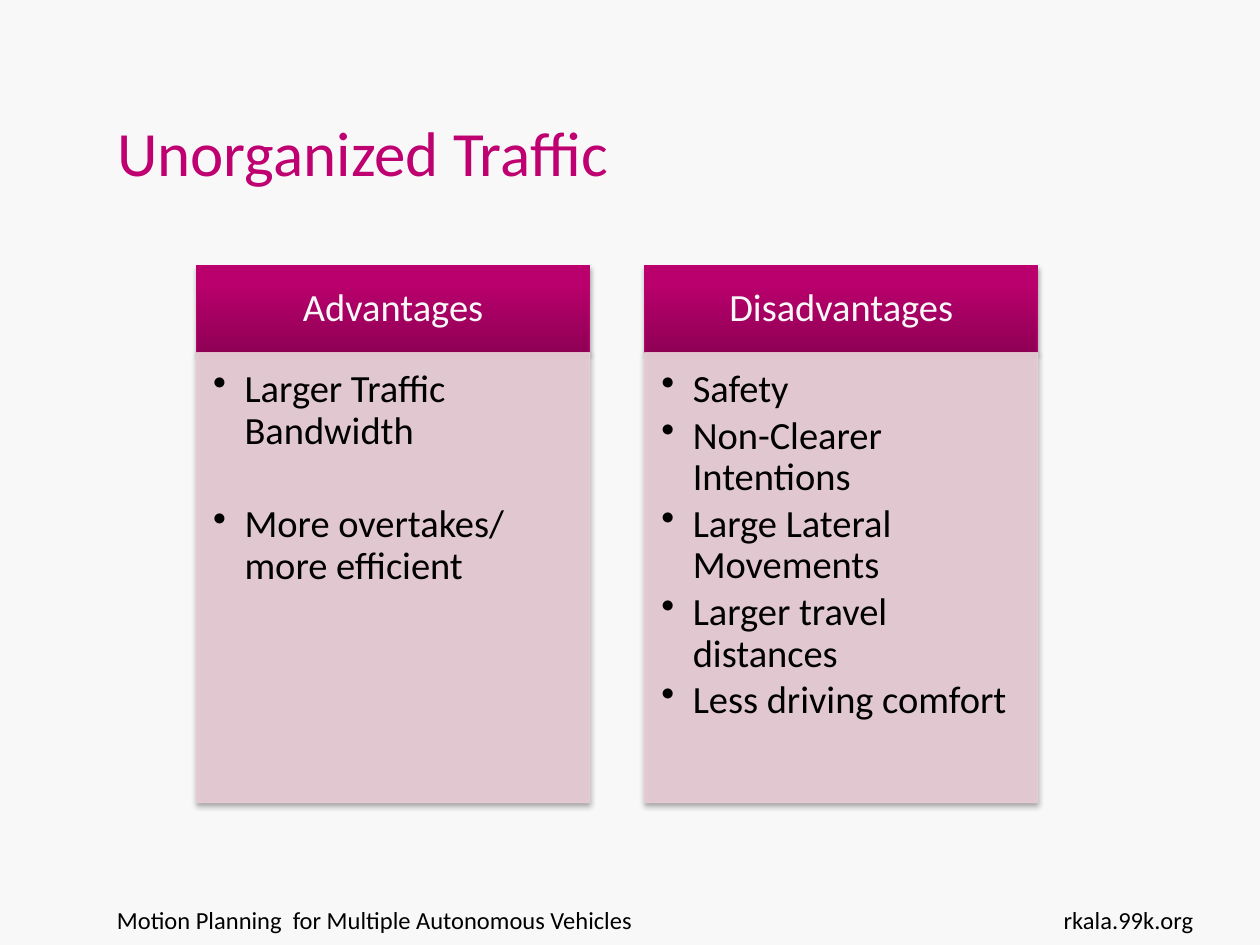
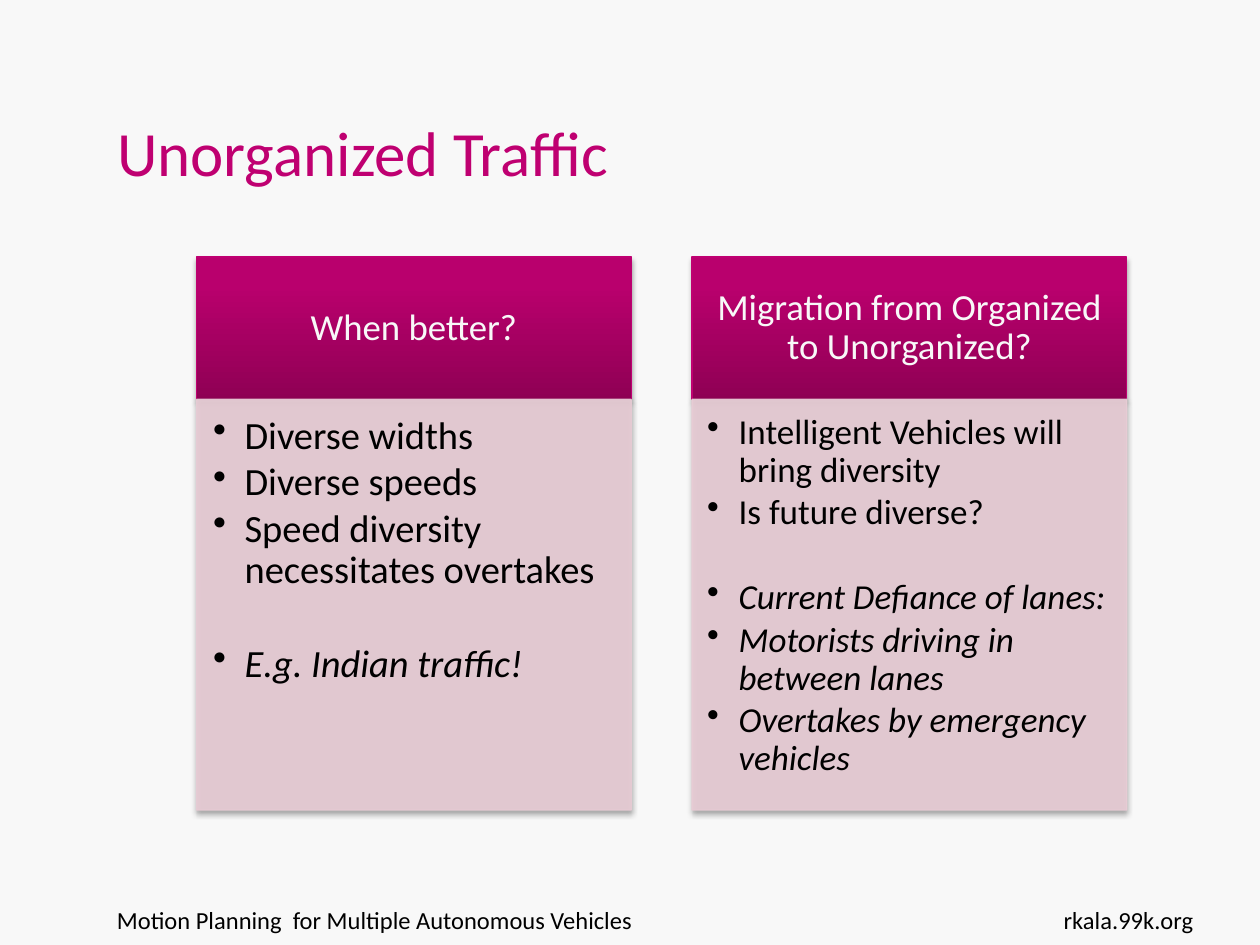
from dataclasses import dataclass

from pptx import Presentation
from pptx.dml.color import RGBColor
from pptx.enum.shapes import MSO_SHAPE
from pptx.enum.text import MSO_ANCHOR, PP_ALIGN
from pptx.oxml import parse_xml
from pptx.oxml.ns import nsdecls, qn
from pptx.util import Inches, Pt

# Content: a bullet is (text, italic, starts a new group)
TITLE = "Unorganized Traffic"
FOOTER_LEFT = "Motion Planning  for Multiple Autonomous Vehicles"
FOOTER_RIGHT = "rkala.99k.org"

PAGES = [
    {
        "top": 2.11, "column": 3.12, "header": 0.69, "body": 3.57, "header_size": 22,
        "cards": [
            ("Advantages", 22, [
                ("Larger Traffic Bandwidth", False, False),
                ("More overtakes/ more efficient", False, True),
            ]),
            ("Disadvantages", 22, [
                ("Safety", False, False),
                ("Non-Clearer Intentions", False, False),
                ("Large Lateral Movements", False, False),
                ("Larger travel distances", False, False),
                ("Less driving comfort", False, False),
            ]),
        ],
    },
    {
        "top": 2.04, "column": 3.45, "header": 1.13, "body": 3.26, "header_size": 21,
        "cards": [
            ("When better?", 22, [
                ("Diverse widths", False, False),
                ("Diverse speeds", False, False),
                ("Speed diversity necessitates overtakes", False, False),
                ("E.g. Indian traffic!", True, True),
            ]),
            ("Migration from Organized to Unorganized?", 20, [
                ("Intelligent Vehicles will bring diversity", False, False),
                ("Is future diverse?", False, False),
                ("Current Defiance of lanes:", True, True),
                ("Motorists driving in between lanes", True, False),
                ("Overtakes by emergency vehicles", True, False),
            ]),
        ],
    },
]


@dataclass(frozen=True)
class Theme:
    font: str = "Calibri"
    background: str = "F8F8F8"
    accent: str = "BF0071"
    panel: str = "E8CCD5"
    text: str = "000000"
    gradient: tuple = ((0, "8F0054"), (80, "B9006D"), (100, "BA006E"))
    title_size: int = 36
    footer_size: int = 14
    line_width: float = 0.75
    panel_alpha: int = 90


THEME = Theme()

# Layout rules
WIDTH, HEIGHT = 10, 7.5
MARGIN = 0.83
CARDS_LEFT = 1.56
COLUMN_PITCH = 1.14          # column step as a share of column width
FOOTER_TOP, FOOTER_HEIGHT = 7.13, 0.52
BULLET_INDENT = 0.25
LINE_SPACING = 0.9
SPACE_AFTER, GROUP_GAP = 0.13, 1.22     # shares of the type size
# Insets (left, top, right, bottom) in points per point of type
HEADER_INSETS = (0.55, 0.32, 0.55, 0.32)
BODY_INSETS = (0.43, 0.43, 0.55, 0.62)


def rgb(value):
    return RGBColor.from_string(value)


def add_span(para, text, size, color, italic=False):
    span = para.add_run()
    span.text = text
    span.font.name = THEME.font
    span.font.size = Pt(size)
    span.font.color.rgb = rgb(color)
    span.font.italic = italic


def set_insets(frame, shares, size):
    frame.word_wrap = True
    (frame.margin_left, frame.margin_top,
     frame.margin_right, frame.margin_bottom) = [Pt(share * size) for share in shares]


def add_alpha(fill_parent, percent):
    color = fill_parent.find(qn("a:solidFill")).find(qn("a:srgbClr"))
    color.append(parse_xml(f'<a:alpha {nsdecls("a")} val="{percent * 1000}"/>'))


def add_bullet(para):
    properties = para._p.get_or_add_pPr()
    indent = Inches(BULLET_INDENT)
    properties.set("marL", str(indent))
    properties.set("indent", str(-indent))
    properties.append(parse_xml(f'<a:buChar {nsdecls("a")} char="•"/>'))


def add_panel(page, left, top, width, height, line_color):
    """Rectangle with a thin outline and a soft shadow below it."""
    panel = page.shapes.add_shape(
        MSO_SHAPE.RECTANGLE, Inches(left), Inches(top), Inches(width), Inches(height))
    panel.line.color.rgb = rgb(line_color)
    panel.line.width = Pt(THEME.line_width)
    panel.shadow.inherit = False
    panel._element.spPr.find(qn("a:effectLst")).append(parse_xml(
        f'<a:outerShdw {nsdecls("a")} blurRad="{Pt(3.1)}" dist="{Pt(1.8)}" dir="5400000" '
        'rotWithShape="0"><a:srgbClr val="000000"><a:alpha val="35000"/></a:srgbClr>'
        '</a:outerShdw>'))
    return panel


def fill_gradient(panel):
    panel.fill.gradient()
    properties = panel._element.spPr
    stops = "".join(f'<a:gs pos="{share * 1000}"><a:srgbClr val="{color}"/></a:gs>'
                    for share, color in THEME.gradient)
    properties.replace(properties.find(qn("a:gradFill")), parse_xml(
        f'<a:gradFill {nsdecls("a")} rotWithShape="1"><a:gsLst>{stops}</a:gsLst>'
        f'<a:lin ang="{270 * 60000}" scaled="0"/></a:gradFill>'))


def add_header(page, text, size, *place):
    header = add_panel(page, *place, THEME.accent)
    fill_gradient(header)
    frame = header.text_frame
    set_insets(frame, HEADER_INSETS, size)
    frame.vertical_anchor = MSO_ANCHOR.MIDDLE
    para = frame.paragraphs[0]
    para.alignment = PP_ALIGN.CENTER
    para.line_spacing = LINE_SPACING
    add_span(para, text, size, THEME.background)


def add_body(page, bullets, size, *place):
    body = add_panel(page, *place, THEME.panel)
    body.fill.solid()
    body.fill.fore_color.rgb = rgb(THEME.panel)
    properties = body._element.spPr
    for parent in (properties, properties.find(qn("a:ln"))):
        add_alpha(parent, THEME.panel_alpha)
    frame = body.text_frame
    set_insets(frame, BODY_INSETS, size)
    frame.vertical_anchor = MSO_ANCHOR.TOP
    for index, (text, italic, new_group) in enumerate(bullets):
        para = frame.add_paragraph() if index else frame.paragraphs[0]
        add_bullet(para)
        para.alignment = PP_ALIGN.LEFT
        para.line_spacing = LINE_SPACING
        para.space_after = Pt(SPACE_AFTER * size)
        if new_group:
            para.space_before = Pt(GROUP_GAP * size)
        add_span(para, text, size, THEME.text, italic)


def add_footer(page, text, left, width, alignment):
    box = page.shapes.add_textbox(
        Inches(left), Inches(FOOTER_TOP), Inches(width), Inches(FOOTER_HEIGHT))
    box.text_frame.word_wrap = True
    para = box.text_frame.paragraphs[0]
    para.alignment = alignment
    add_span(para, text, THEME.footer_size, THEME.text)


def add_page(deck):
    """New page with the shared title and footers."""
    page = deck.slides.add_slide(deck.slide_layouts[5])
    title = page.shapes.title
    title.left, title.top = Inches(MARGIN), Inches(0.3)
    title.width, title.height = Inches(6.77), Inches(1.25)
    title.text_frame.word_wrap = True
    title.text_frame.vertical_anchor = MSO_ANCHOR.BOTTOM
    para = title.text_frame.paragraphs[0]
    para.alignment = PP_ALIGN.LEFT
    add_span(para, TITLE, THEME.title_size, THEME.accent)
    add_footer(page, FOOTER_LEFT, MARGIN, 6.93, PP_ALIGN.LEFT)
    add_footer(page, FOOTER_RIGHT, 8.07, 1.5, PP_ALIGN.RIGHT)
    return page


def add_cards(page, content):
    top, width, header = content["top"], content["column"], content["header"]
    for column, (heading, size, bullets) in enumerate(content["cards"]):
        left = CARDS_LEFT + column * width * COLUMN_PITCH
        add_header(page, heading, content["header_size"], left, top, width, header)
        add_body(page, bullets, size, left, top + header, width, content["body"])


def main():
    deck = Presentation()
    deck.slide_width, deck.slide_height = Inches(WIDTH), Inches(HEIGHT)
    background = deck.slide_master.background.fill
    background.solid()
    background.fore_color.rgb = rgb(THEME.background)
    for content in PAGES:
        add_cards(add_page(deck), content)
    deck.save("out.pptx")


if __name__ == "__main__":
    main()
